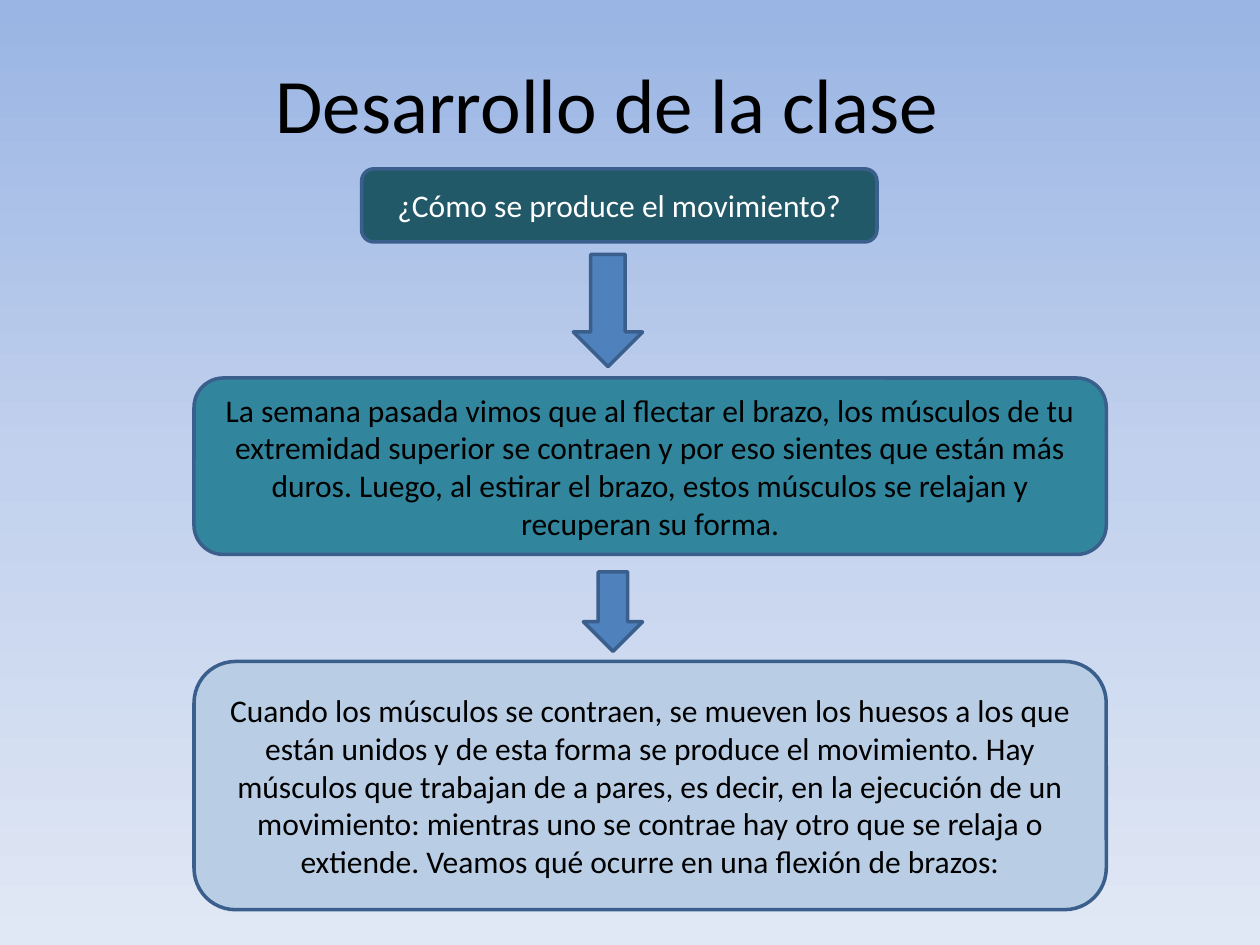
from copy import deepcopy
from typing import NamedTuple

from pptx import Presentation
from pptx import util as u
from pptx.dml.color import RGBColor
from pptx.enum import shapes, text

WIDE, HIGH = u.Inches(10), u.Inches(7.5)
FACE = "Calibri"
BLACK = RGBColor(0x00, 0x00, 0x00)
WHITE = RGBColor(0xFF, 0xFF, 0xFF)
DARK = RGBColor(0x21, 0x59, 0x68)
TEAL = RGBColor(0x31, 0x85, 0x9C)
PALE = RGBColor(0xB9, 0xCD, 0xE5)
BLUE = RGBColor(0x4F, 0x81, 0xBD)
EDGE = RGBColor(0x3A, 0x5F, 0x8C)
SKY = (
    (0, RGBColor(0x9A, 0xB5, 0xE4)),
    (0.5, RGBColor(0xC2, 0xD1, 0xED)),
    (1, RGBColor(0xE1, 0xE8, 0xF5)),
)


class Area(NamedTuple):
    """Place and size in percent of the slide's width and height."""
    left: float
    top: float
    width: float
    height: float

    def frame(self) -> dict:
        sides = (WIDE, HIGH, WIDE, HIGH)
        return {name: round(side * share / 100)
                for name, share, side in zip(self._fields, self, sides)}


class Step(NamedTuple):
    area: Area
    fill: RGBColor
    ink: RGBColor
    words: str


TITLE = Area(3.2, 4, 90, 13.73)
STEPS = (
    Step(Area(28.7, 17.87, 40.9, 7.73), DARK, WHITE,
         "¿Cómo se produce el movimiento?"),
    Step(Area(15.4, 40, 72.4, 18.67), TEAL, BLACK,
         "La semana pasada vimos que al flectar el brazo, los músculos de tu "
         "extremidad superior se contraen y por eso sientes que están más "
         "duros. Luego, al estirar el brazo, estos músculos se relajan y "
         "recuperan su forma."),
    Step(Area(15.4, 70, 72.4, 26.27), PALE, BLACK,
         "Cuando los músculos se contraen, se mueven los huesos a los que "
         "están unidos y de esta forma se produce el movimiento. Hay "
         "músculos que trabajan de a pares, es decir, en la ejecución de un "
         "movimiento: mientras uno se contrae hay otro que se relaja o "
         "extiende. Veamos qué ocurre en una flexión de brazos:"),
)
ARROWS = (Area(45.5, 26.93, 5.5, 11.87), Area(46.3, 60.53, 4.7, 8.4))


def apply(target, values: dict) -> None:
    for name, value in values.items():
        setattr(target, name, value)


def write(shape, words: str, size: float, ink: RGBColor) -> None:
    frame = shape.text_frame
    frame.text = words
    apply(frame, {"word_wrap": True,
                  "vertical_anchor": text.MSO_ANCHOR.MIDDLE})
    para = frame.paragraphs[0]
    para.alignment = text.PP_ALIGN.CENTER
    font = para.runs[0].font
    apply(font, {"name": FACE, "size": u.Pt(size)})
    font.color.rgb = ink


def draw(slide, kind: shapes.MSO_SHAPE, area: Area, fill: RGBColor):
    shape = slide.shapes.add_shape(kind, **area.frame())
    shape.shadow.inherit = False
    shape.fill.solid()
    shape.fill.fore_color.rgb = fill
    shape.line.color.rgb = EDGE
    shape.line.width = u.Pt(2)
    return shape


def paint(slide) -> None:
    fill = slide.background.fill
    fill.gradient()
    fill.gradient_angle = 270
    stops = slide.element.xpath(".//p:bg//a:gsLst")[0]
    stops.append(deepcopy(stops[0]))
    for stop, (place, color) in zip(fill.gradient_stops, SKY):
        stop.position = place
        stop.color.rgb = color


def main() -> None:
    deck = Presentation()
    apply(deck, {"slide_width": WIDE, "slide_height": HIGH})
    slide = deck.slides.add_slide(deck.slide_layouts[5])
    paint(slide)

    # Title
    title = slide.shapes.title
    apply(title, TITLE.frame())
    write(title, "Desarrollo de la clase", 44, BLACK)

    # Steps of the lesson
    for step in STEPS:
        box = draw(slide, shapes.MSO_SHAPE.ROUNDED_RECTANGLE,
                   step.area, step.fill)
        write(box, step.words, 18, step.ink)

    # Arrows between the steps
    for area in ARROWS:
        draw(slide, shapes.MSO_SHAPE.DOWN_ARROW, area, BLUE)

    deck.save("out.pptx")


if __name__ == "__main__":
    main()
